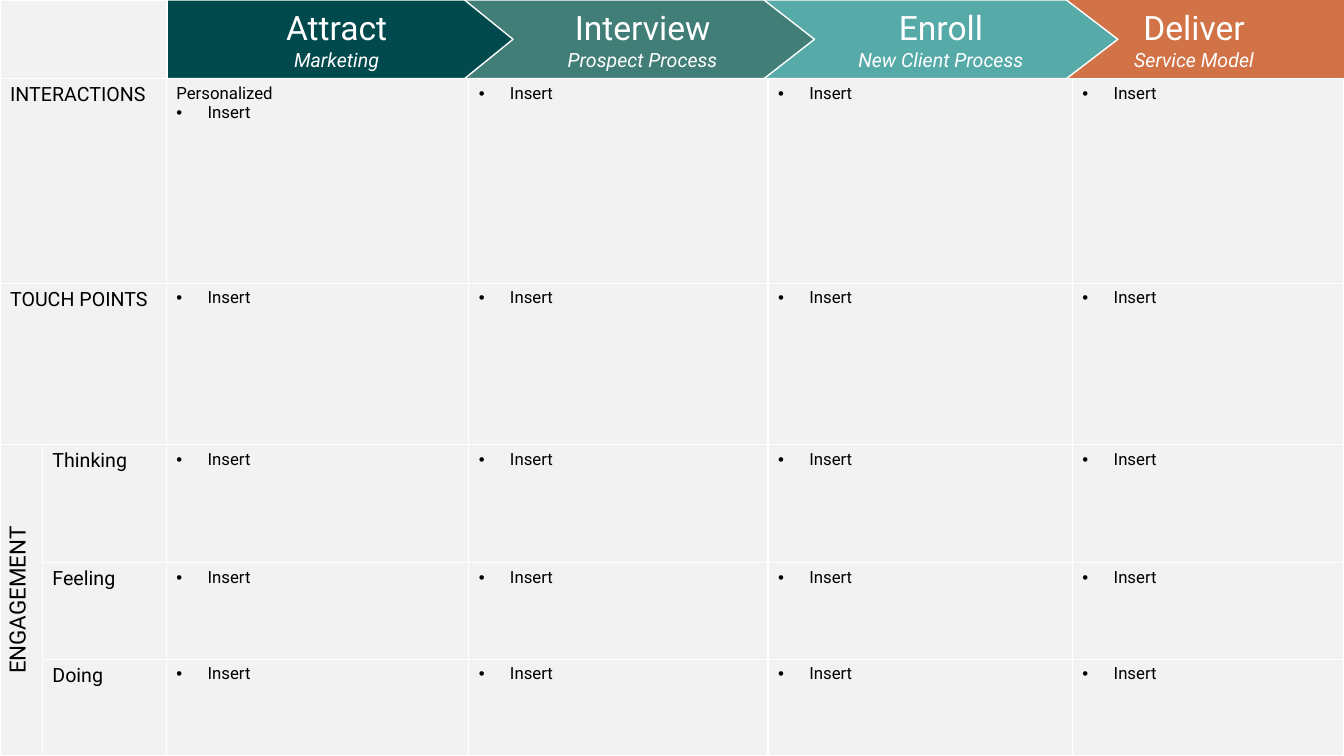
from itertools import accumulate

from lxml.etree import SubElement as Sub
from pptx import Presentation
from pptx.dml.color import RGBColor as RGB
from pptx.enum.shapes import MSO_SHAPE as Shape
from pptx.enum.text import MSO_ANCHOR as Anchor, PP_ALIGN as Align
from pptx.oxml.ns import qn
from pptx.util import Inches as In, Pt

THEME = {
    "font": "Roboto", "white": "FFFFFF", "black": "000000", "cell": "F2F2F2",
    "title": 24, "side": 16, "label": 14, "body": 12,
}
WIDE, HIGH = 40 / 3, 7.5
COLS = [0.42, 1.23, 3, 2.97, 3.02, 2.69]
ROWS = [2.03, 1.6, 1.17, 0.96, 0.96]
HEAD = HIGH - sum(ROWS)
EDGES = [0, *accumulate(COLS)]
FIRST = 2  # first column that belongs to a stage
INDENT = In(0.31)

# title, subtitle, fill, left, notch, shoulder, tip, left inset, right inset
STAGES = [
    ("Attract", "Marketing", "004A4D", 1.66, 1.66, 4.61, 5.09, 0.27, 0.34),
    ("Interview", "Prospect Process", "417E77", 4.54, 5.03, 7.58, 8.08, 0.75, 0.62),
    ("Enroll", "New Client Process", "56ABA8", 7.45, 7.96, 10.58, 11.09, 0.75, 0.62),
    ("Deliver", "Service Model", "D17346", 10.22, 10.22, WIDE, WIDE, 0.21, 0.07),
]
LABELS = ["INTERACTIONS", "TOUCH POINTS", "Thinking", "Feeling", "Doing"]


def put(para, text, size, color="black", slant=None):
    """Add one styled run to a paragraph."""
    run = para.add_run()
    run.text = text
    font = run.font
    font.name, font.size, font.italic = THEME["font"], Pt(THEME[size]), slant
    font.color.rgb = RGB.from_string(THEME[color])


def paint(shape, fill, width):
    """Give a shape its fill and a white line, or no line at width 0."""
    shape.shadow.inherit = False
    shape.fill.solid()
    shape.fill.fore_color.rgb = RGB.from_string(fill)
    if width:
        shape.line.color.rgb = RGB.from_string(THEME["white"])
        shape.line.width = Pt(width)
    else:
        shape.line.fill.background()


deck = Presentation()
deck.slide_width, deck.slide_height = In(WIDE), In(HIGH)
shapes = deck.slides.add_slide(deck.slide_layouts[6]).shapes

# Stage arrows: each one lies over the next
for title, sub, fill, left, notch, side, tip, inl, inr in reversed(STAGES):
    dots = [(side, 0), (side, HEAD), (left, HEAD)]
    if tip > side:
        dots.insert(1, (tip, HEAD / 2))
    if notch > left:
        dots.append((notch, HEAD / 2))
    pen = shapes.build_freeform(In(left), 0)
    pen.add_line_segments([(In(x), In(y)) for x, y in dots], close=True)
    arrow = pen.convert_to_shape()
    paint(arrow, fill, 1 if tip > side else 0)
    frame = arrow.text_frame
    frame.word_wrap = True
    frame.vertical_anchor = Anchor.MIDDLE
    frame.margin_left, frame.margin_right = In(inl), In(inr)
    frame.margin_top = frame.margin_bottom = In(0.14)
    top, low = frame.paragraphs[0], frame.add_paragraph()
    top.alignment = low.alignment = Align.CENTER
    put(top, title, "title", "white")
    put(low, sub, "label", "white", True)

corner = shapes.add_shape(Shape.RECTANGLE, 0, 0, In(STAGES[0][3]), In(HEAD))
paint(corner, THEME["cell"], 1.5)

# Table below the arrows
table = shapes.add_table(
    len(ROWS), len(COLS), 0, In(HEAD), In(EDGES[-1]), In(sum(ROWS))).table
table.first_row = table.horz_banding = False
for col, width in zip(table.columns, COLS):
    col.width = In(width)
for row, height in zip(table.rows, ROWS):
    row.height = In(height)

for cell in table.iter_cells():
    props = cell._tc.get_or_add_tcPr()
    for edge in ("a:lnL", "a:lnR", "a:lnT", "a:lnB"):
        line = Sub(props, qn(edge), w=str(Pt(1)))
        Sub(Sub(line, qn("a:solidFill")), qn("a:srgbClr"), val=THEME["white"])
    cell.fill.solid()
    cell.fill.fore_color.rgb = RGB.from_string(THEME["cell"])

for r, label in enumerate(LABELS):
    whole = r < 2
    name = table.cell(r, 0 if whole else 1)
    if whole:
        name.merge(table.cell(r, 1))
    put(name.text_frame.paragraphs[0], label, "label")
    for c in range(FIRST, len(COLS)):
        frame = table.cell(r, c).text_frame
        para = frame.paragraphs[0]
        if (r, c) == (0, FIRST):
            put(para, "Personalized", "body")
            para = frame.add_paragraph()
        props = para._p.get_or_add_pPr()
        props.set("marL", str(INDENT))
        props.set("indent", str(-INDENT))
        Sub(props, qn("a:buFont"), typeface="Arial")
        Sub(props, qn("a:buChar"), char="•")
        put(para, "Insert", "body")
table.cell(1, 0).margin_right = 0

side = table.cell(2, 0)
side.merge(table.cell(4, 0))
side._tc.get_or_add_tcPr().set("vert", "vert270")
para = side.text_frame.paragraphs[0]
para.alignment = Align.CENTER
put(para, "ENGAGEMENT", "side")

deck.save("out.pptx")
